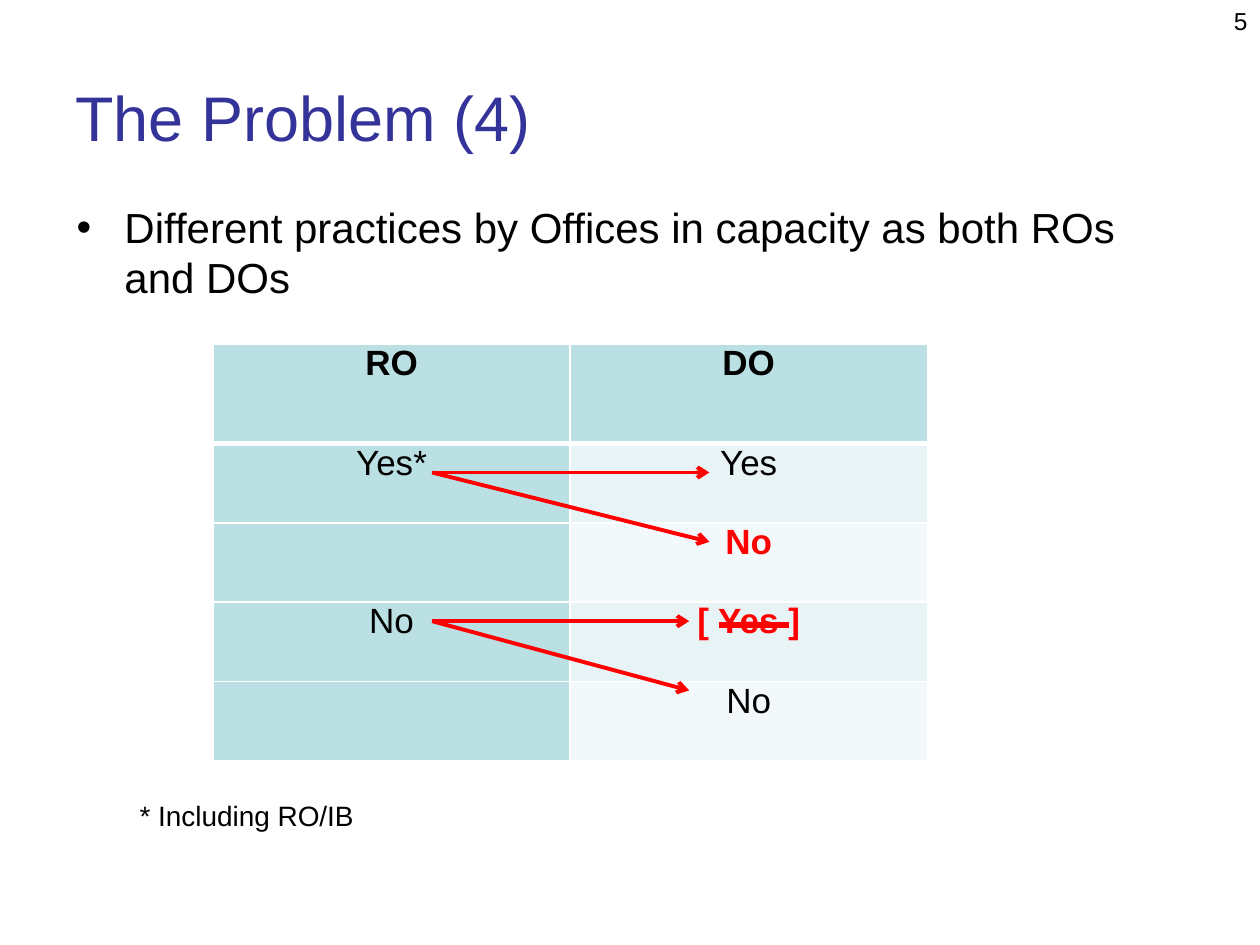
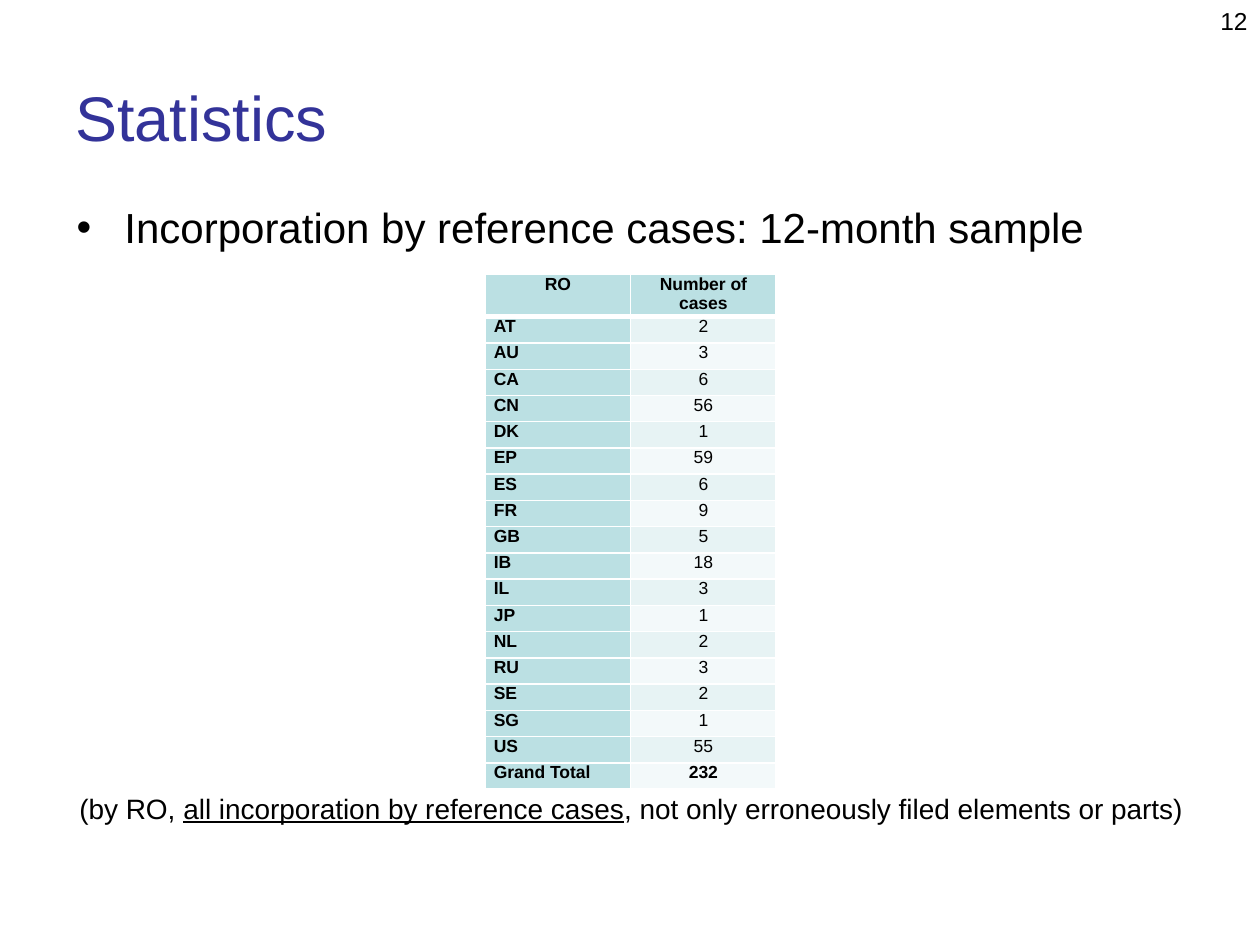
from dataclasses import dataclass

from lxml import etree
from pptx import Presentation
from pptx import util as u
from pptx.dml.color import RGBColor
from pptx.enum import shapes, text
from pptx.oxml.ns import qn

FONT = "Arial"
COLORS = {
    "title": "333399",
    "ink": "000000",
    "accent": "FF0000",
    "header": "BBE0E3",
    "band_dark": "E7F3F4",
    "band_light": "F3F9FA",
    "border": "FFFFFF",
}
LEFT, CENTER, RIGHT = text.PP_ALIGN.LEFT, text.PP_ALIGN.CENTER, text.PP_ALIGN.RIGHT


@dataclass
class Run:
    text: str
    size: float
    color: str = "ink"
    bold: bool = False
    underline: bool = False


@dataclass
class Box:
    left: float
    top: float
    width: float
    height: float


@dataclass
class Grid:
    box: Box
    header_height: float
    inset: float
    label_align: text.PP_ALIGN
    rows: list[tuple[Run, Run]]


@dataclass
class Stroke:
    start: tuple[float, float]
    end: tuple[float, float]
    width: float = 2.25
    arrow: bool = True


TITLE = Box(0.5, 0.3, 9, 1.25)
BULLET = Box(0.51, 1.55, 9, 1)
PAGE_NUMBER = Box(7.67, 0, 2.33, 0.52)


def rgb(name: str) -> RGBColor:
    return RGBColor.from_string(COLORS[name])


def add_runs(paragraph, runs: list[Run], align: text.PP_ALIGN) -> None:
    paragraph.alignment = align
    for item in runs:
        run = paragraph.add_run()
        run.text = item.text
        font = run.font
        font.name, font.size = FONT, u.Pt(item.size)
        font.bold, font.underline = item.bold, item.underline
        font.color.rgb = rgb(item.color)


def add_text(slide, box: Box, runs: list[Run], align=LEFT, anchor=text.MSO_ANCHOR.TOP):
    frame = slide.shapes.add_textbox(
        u.Inches(box.left), u.Inches(box.top), u.Inches(box.width), u.Inches(box.height)
    ).text_frame
    frame.word_wrap = True
    frame.vertical_anchor = anchor
    add_runs(frame.paragraphs[0], runs, align)
    return frame.paragraphs[0]


def add_bullet(slide, wording: str) -> None:
    paragraph = add_text(slide, BULLET, [Run(wording, 24)])
    props = paragraph._p.get_or_add_pPr()
    indent = u.Inches(0.38)
    props.set("marL", str(indent))
    props.set("indent", str(-indent))
    etree.SubElement(props, qn("a:buFont"), typeface=FONT)
    etree.SubElement(props, qn("a:buChar"), char="•")


def add_borders(cell, bottom: float) -> None:
    props = cell._tc.get_or_add_tcPr()
    widths = {"a:lnL": 1, "a:lnR": 1, "a:lnT": 1, "a:lnB": bottom}
    for place, (tag, width) in enumerate(widths.items()):
        line = etree.Element(qn(tag), w=str(u.Pt(width)))
        fill = etree.SubElement(line, qn("a:solidFill"))
        etree.SubElement(fill, qn("a:srgbClr"), val=COLORS["border"])
        props.insert(place, line)


def cell_color(row: int, column: int) -> str:
    if row == 0 or column == 0:
        return "header"
    return "band_dark" if row % 2 else "band_light"


def add_grid(slide, grid: Grid) -> None:
    box, body_rows = grid.box, len(grid.rows) - 1
    table = slide.shapes.add_table(
        len(grid.rows), 2,
        u.Inches(box.left), u.Inches(box.top), u.Inches(box.width), u.Inches(box.height),
    ).table
    table.horz_banding = False
    for column in table.columns:
        column.width = u.Inches(box.width / 2)
    for r, entries in enumerate(grid.rows):
        height = (box.height - grid.header_height) / body_rows if r else grid.header_height
        table.rows[r].height = u.Inches(height)
        for c, entry in enumerate(entries):
            cell = table.cell(r, c)
            cell.margin_left = cell.margin_right = u.Inches(grid.inset)
            cell.margin_top = cell.margin_bottom = 0
            cell.fill.solid()
            cell.fill.fore_color.rgb = rgb(cell_color(r, c))
            add_borders(cell, bottom=1 if r else 3)
            if entry.text:
                align = grid.label_align if r and c == 0 else CENTER
                add_runs(cell.text_frame.paragraphs[0], [entry], align)
            else:
                cell.text_frame.paragraphs[0].font.size = u.Pt(entry.size)


def add_stroke(slide, stroke: Stroke) -> None:
    (x1, y1), (x2, y2) = stroke.start, stroke.end
    connector = slide.shapes.add_connector(
        shapes.MSO_CONNECTOR.STRAIGHT, u.Inches(x1), u.Inches(y1), u.Inches(x2), u.Inches(y2)
    )
    connector.line.color.rgb = rgb("accent")
    connector.line.width = u.Pt(stroke.width)
    if stroke.arrow:
        etree.SubElement(connector.line._get_or_add_ln(), qn("a:tailEnd"), type="arrow")
    etree.SubElement(connector._element.spPr, qn("a:effectLst"))


def add_content_slide(deck, title: str, bullet: str, number: int):
    slide = deck.slides.add_slide(deck.slide_layouts[6])
    add_text(slide, TITLE, [Run(title, 36, "title")], anchor=text.MSO_ANCHOR.MIDDLE)
    add_bullet(slide, bullet)
    add_text(slide, PAGE_NUMBER, [Run(str(number), 14)], RIGHT)
    return slide


def build_problem(deck) -> None:
    slide = add_content_slide(
        deck, "The Problem (4)",
        "Different practices by Offices in capacity as both ROs and DOs", 5,
    )
    # Practices as receiving and designated Office
    practices = [
        (Run("RO", 20, bold=True), Run("DO", 20, bold=True)),
        (Run("Yes*", 20), Run("Yes", 20)),
        (Run("", 20), Run("No", 20, "accent", True)),
        (Run("No", 20), Run("[ Yes ]", 20, "accent", True)),
        (Run("", 20), Run("No", 20)),
    ]
    add_grid(slide, Grid(Box(1.69, 2.73, 5.67, 3.31), 0.79, 0.08, CENTER, practices))

    # Each RO answer leads to two DO answers
    for y, tip_x in ((3.75, 5.63), (4.93, 5.47)):
        for drop in (0, 0.55):
            add_stroke(slide, Stroke((3.43, y), (tip_x, y + drop)))
    # Strike out the excluded answer
    add_stroke(slide, Stroke((5.71, 4.96), (6.26, 4.96), 3, False))
    add_text(slide, Box(1.01, 6.29, 4, 0.37), [Run("* Including RO/IB", 16)])


def build_statistics(deck) -> None:
    slide = add_content_slide(
        deck, "Statistics", "Incorporation by reference cases: 12-month sample", 12
    )
    # Cases per receiving Office
    cases = {
        "AT": 2, "AU": 3, "CA": 6, "CN": 56, "DK": 1, "EP": 59, "ES": 6, "FR": 9, "GB": 5,
        "IB": 18, "IL": 3, "JP": 1, "NL": 2, "RU": 3, "SE": 2, "SG": 1, "US": 55,
    }
    rows = [(Run("RO", 10, bold=True), Run("Number of cases", 10, bold=True))]
    rows += [(Run(office, 10, bold=True), Run(str(n), 10)) for office, n in cases.items()]
    total = str(sum(cases.values()))
    rows.append((Run("Grand Total", 10, bold=True), Run(total, 10, bold=True)))
    add_grid(slide, Grid(Box(3.85, 2.18, 2.31, 4.05), 0.3, 0.07, LEFT, rows))

    # Scope of the sample
    add_text(slide, Box(0.51, 6.23, 9, 0.37), [
        Run("(by RO, ", 16),
        Run("all incorporation by reference cases", 16, underline=True),
        Run(", not only erroneously filed elements or parts)", 16),
    ], CENTER)


def main() -> None:
    deck = Presentation()
    deck.slide_width, deck.slide_height = u.Inches(10), u.Inches(7.5)
    build_problem(deck)
    build_statistics(deck)
    deck.save("out.pptx")


if __name__ == "__main__":
    main()
